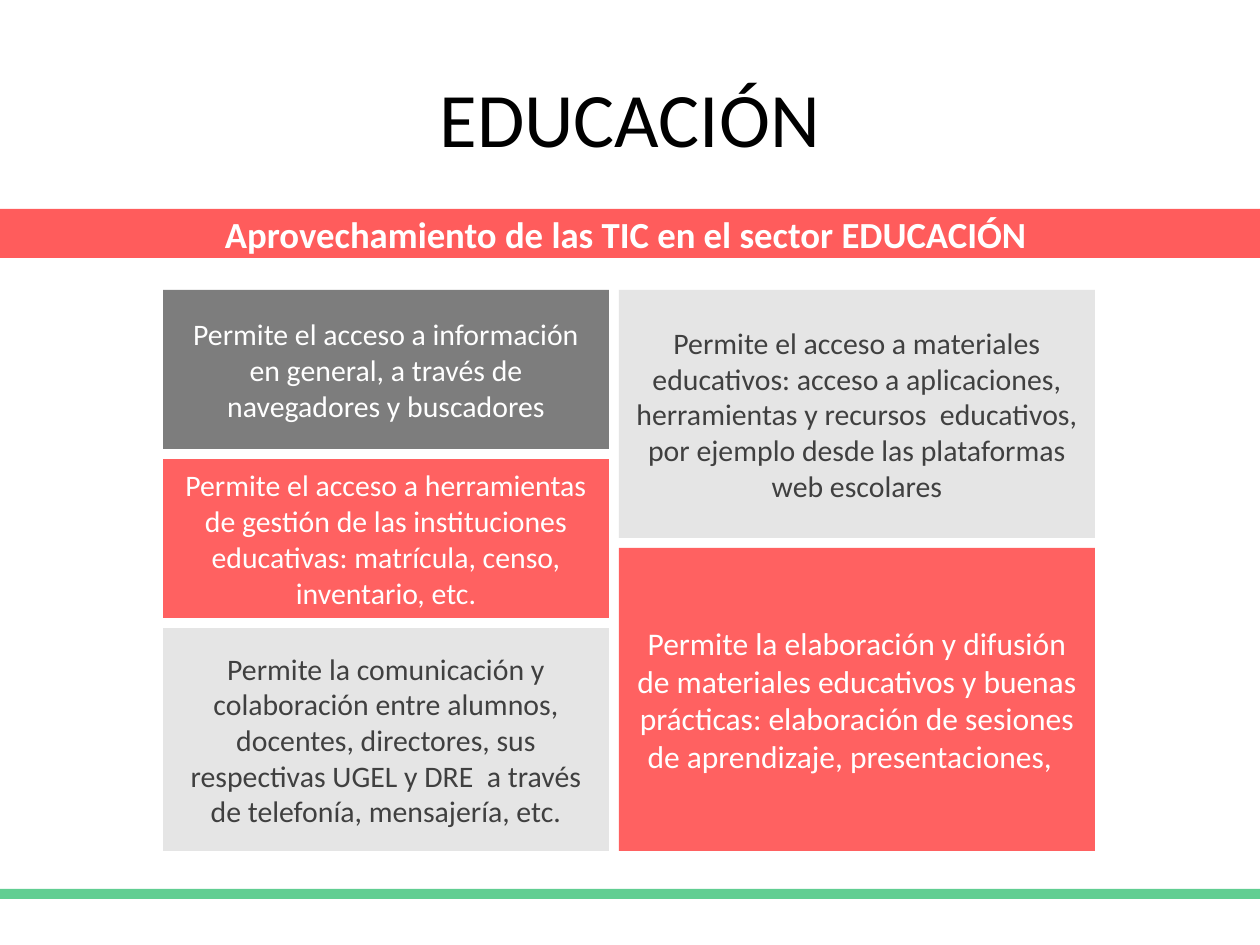
from dataclasses import dataclass

from lxml.etree import SubElement
from pptx import Presentation
from pptx.dml.color import RGBColor
from pptx.enum.shapes import MSO_SHAPE
from pptx.enum.text import MSO_ANCHOR, PP_ALIGN
from pptx.oxml.ns import qn
from pptx.util import Pt

EMU_PER_PX = 914400 / 126
SLIDE_WIDTH, SLIDE_HEIGHT = 1260, 945


@dataclass(frozen=True)
class Theme:
    """Colours as (hex, opacity percent) fills, text colours and type sizes."""

    font: str = "Calibri"
    black: str = "000000"
    white: str = "FFFFFF"
    dark: str = "404040"
    banner: tuple = ("FF0000", 64)
    red: tuple = ("FF0000", 62)
    green: tuple = ("00B050", 62)
    light_gray: tuple = ("D9D9D9", 68)
    dark_gray: tuple = ("404040", 68)
    title_size: int = 44
    banner_size: int = 21
    large_size: int = 18
    body_size: int = 17


THEME = Theme()
GRID_TOP, GRID_GAP = 290, 10

LEFT_CARDS = (
    (159, THEME.dark_gray, THEME.white, THEME.body_size,
     "Permite el acceso a información en general, a través de navegadores y buscadores"),
    (159, THEME.red, THEME.white, THEME.body_size,
     "Permite el acceso a herramientas de gestión de las instituciones educativas: "
     "matrícula, censo, inventario, etc."),
    (223, THEME.light_gray, THEME.dark, THEME.body_size,
     "Permite la comunicación y colaboración entre alumnos, docentes, directores, "
     "sus respectivas UGEL y DRE  a través de telefonía, mensajería, etc."),
)
RIGHT_CARDS = (
    (248, THEME.light_gray, THEME.dark, THEME.body_size,
     "Permite el acceso a materiales educativos: acceso a aplicaciones, herramientas "
     "y recursos  educativos, por ejemplo desde las plataformas web escolares"),
    (303, THEME.red, THEME.white, THEME.large_size,
     "Permite la elaboración y difusión de materiales educativos y buenas prácticas: "
     "elaboración de sesiones de aprendizaje, presentaciones,  "),
)


def px(length):
    """Convert whole pixels to EMU."""
    return round(length * EMU_PER_PX)


def write_text(shape, text, *, size, color, bold=False):
    """Write centred, wrapped text into a shape."""
    frame = shape.text_frame
    frame.word_wrap = True
    frame.vertical_anchor = MSO_ANCHOR.MIDDLE
    paragraph = frame.paragraphs[0]
    paragraph.alignment = PP_ALIGN.CENTER
    run = paragraph.add_run()
    run.text = text
    run.font.name = THEME.font
    run.font.size = Pt(size)
    run.font.bold = bold
    run.font.color.rgb = RGBColor.from_string(color)


def add_panel(slide, left, top, width, height, fill):
    """Add a borderless translucent rectangle."""
    color, opacity = fill
    panel = slide.shapes.add_shape(MSO_SHAPE.RECTANGLE, px(left), px(top), px(width), px(height))
    panel.shadow.inherit = False
    panel.line.fill.background()
    panel.fill.solid()
    panel.fill.fore_color.rgb = RGBColor.from_string(color)
    tint = panel.fill._xPr.find(qn("a:solidFill"))[0]
    SubElement(tint, qn("a:alpha")).set("val", str(opacity * 1000))
    return panel


def add_title(slide, text):
    """Add the slide heading."""
    heading = slide.shapes.add_textbox(px(63), px(38), px(1134), px(158))
    write_text(heading, text, size=THEME.title_size, color=THEME.black)


def add_card_column(slide, left, width, cards):
    """Stack cards downwards with an equal gap."""
    top = GRID_TOP
    for height, fill, color, size, text in cards:
        card = add_panel(slide, left, top, width, height, fill)
        write_text(card, text, size=size, color=color)
        top += height + GRID_GAP


def main():
    """Build and save the slide."""
    presentation = Presentation()
    presentation.slide_width = px(SLIDE_WIDTH)
    presentation.slide_height = px(SLIDE_HEIGHT)
    slide = presentation.slides.add_slide(presentation.slide_layouts[6])

    add_title(slide, "EDUCACIÓN")
    add_panel(slide, 0, 889, SLIDE_WIDTH, 10, THEME.green)
    banner = add_panel(slide, 0, 209, SLIDE_WIDTH, 49, THEME.banner)
    write_text(banner, "Aprovechamiento de las TIC en el sector EDUCACIÓN ",
               size=THEME.banner_size, color=THEME.white, bold=True)
    add_card_column(slide, 619, 476, RIGHT_CARDS)
    add_card_column(slide, 163, 446, LEFT_CARDS)

    presentation.save("out.pptx")


if __name__ == "__main__":
    main()
